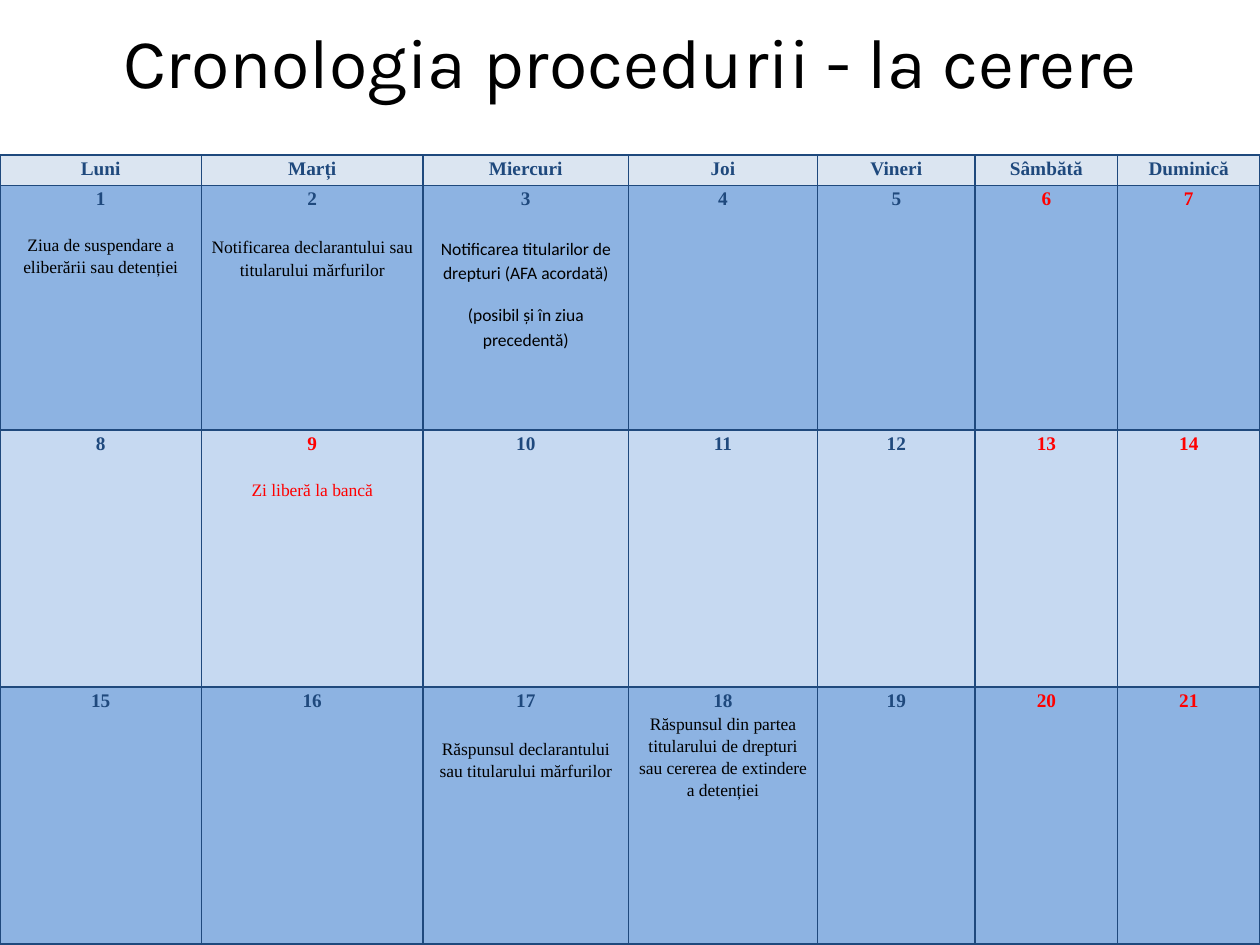
from dataclasses import dataclass

from lxml.etree import SubElement
from pptx import Presentation
from pptx.dml.color import RGBColor
from pptx.enum.text import MSO_ANCHOR, PP_ALIGN
from pptx.oxml.ns import qn
from pptx.table import _Cell
from pptx.util import Cm, Pt

NAVY = RGBColor(0x1F, 0x49, 0x7D)
RED = RGBColor(0xFF, 0x00, 0x00)
BLACK = RGBColor(0x00, 0x00, 0x00)
HEADER_BLUE = RGBColor(0xDB, 0xE5, 0xF1)
MID_BLUE = RGBColor(0x8D, 0xB3, 0xE2)
PALE_BLUE = RGBColor(0xC6, 0xD9, 0xF1)

SERIF = "Times New Roman"
DAYS = ["Luni", "Marți", "Miercuri", "Joi", "Vineri", "Sâmbătă", "Duminică"]
COL_WIDTHS = [4.06, 4.47, 4.14, 3.81, 3.18, 2.87, 2.87]
ROW_HEIGHTS = [0.62, 4.93, 5.18, 5.18]
WEEK_FILLS = [MID_BLUE, PALE_BLUE, MID_BLUE]
HOLIDAYS = {9}


@dataclass
class Note:
    """Text below a day number; gap is the space above it in points."""
    lines: list[str]
    gap: float = 0
    font: str = SERIF
    color: RGBColor = BLACK


NOTES = {
    1: Note(["Ziua de suspendare a eliberării sau detenției"], 13.2),
    2: Note(["Notificarea declarantului sau titularului mărfurilor"], 14.5),
    3: Note(["Notificarea titularilor de drepturi (AFA acordată)",
             "(posibil și în ziua precedentă)"], 14.5, "Calibri"),
    9: Note(["Zi liberă la bancă"], 13.2, color=RED),
    17: Note(["Răspunsul declarantului sau titularului mărfurilor"], 14.5),
    18: Note(["Răspunsul din partea titularului de drepturi sau cererea "
              "de extindere a detenției"]),
}


def style_cell(cell: _Cell, fill: RGBColor) -> None:
    """Set margins, a thin navy border on every side, and the fill."""
    cell.margin_left = cell.margin_right = Cm(0.18)
    cell.margin_top = cell.margin_bottom = 0
    tc_pr = cell._tc.get_or_add_tcPr()
    for side in ("lnL", "lnR", "lnT", "lnB"):
        ln = SubElement(tc_pr, qn(f"a:{side}"), w=str(Pt(1)))
        solid = SubElement(ln, qn("a:solidFill"))
        SubElement(solid, qn("a:srgbClr"), val=str(NAVY))
    cell.fill.solid()
    cell.fill.fore_color.rgb = fill


def write_line(p, text: str, size: float, color: RGBColor,
               bold: bool = False, font: str = SERIF) -> None:
    p.text = text
    p.alignment = PP_ALIGN.CENTER
    p.line_spacing = 1.15
    p.font.size = Pt(size)
    p.font.bold = bold
    p.font.name = font
    p.font.color.rgb = color


def write_heading(cell: _Cell, text: str, color: RGBColor) -> None:
    write_line(cell.text_frame.paragraphs[0], text, 11, color, bold=True)


def write_note(cell: _Cell, note: Note) -> None:
    for i, line in enumerate(note.lines):
        p = cell.text_frame.add_paragraph()
        write_line(p, line, 10, note.color, font=note.font)
        p.space_before = Pt(10 if i else note.gap)


def main() -> None:
    prs = Presentation()
    prs.slide_width, prs.slide_height = Cm(25.4), Cm(19.05)
    s = prs.slides.add_slide(prs.slide_layouts[5])

    # Title
    title = s.shapes.title
    title.left, title.top = Cm(1.27), Cm(0.53)
    title.width, title.height = Cm(22.86), Cm(1.4)
    tf = title.text_frame
    tf.vertical_anchor = MSO_ANCHOR.MIDDLE
    p = tf.paragraphs[0]
    p.text = "Cronologia procedurii - la cerere"
    p.alignment = PP_ALIGN.CENTER
    p.font.name = "Karla"
    p.font.size = Pt(40)
    p.font.color.rgb = BLACK

    # Calendar grid
    table = s.shapes.add_table(
        len(ROW_HEIGHTS), len(DAYS), 0, Cm(3.12),
        Cm(sum(COL_WIDTHS)), Cm(sum(ROW_HEIGHTS))).table
    table.horz_banding = False
    for column, width in zip(table.columns, COL_WIDTHS):
        column.width = Cm(width)
    for row, height in zip(table.rows, ROW_HEIGHTS):
        row.height = Cm(height)

    # Weekday names
    for col, name in enumerate(DAYS):
        cell = table.cell(0, col)
        style_cell(cell, HEADER_BLUE)
        write_heading(cell, name, NAVY)

    # Numbered days, with weekends and holidays in red
    for week, fill in enumerate(WEEK_FILLS):
        for col in range(len(DAYS)):
            day = week * len(DAYS) + col + 1
            cell = table.cell(week + 1, col)
            style_cell(cell, fill)
            day_off = col >= 5 or day in HOLIDAYS
            write_heading(cell, str(day), RED if day_off else NAVY)
            if day in NOTES:
                write_note(cell, NOTES[day])

    prs.save("out.pptx")


if __name__ == "__main__":
    main()
